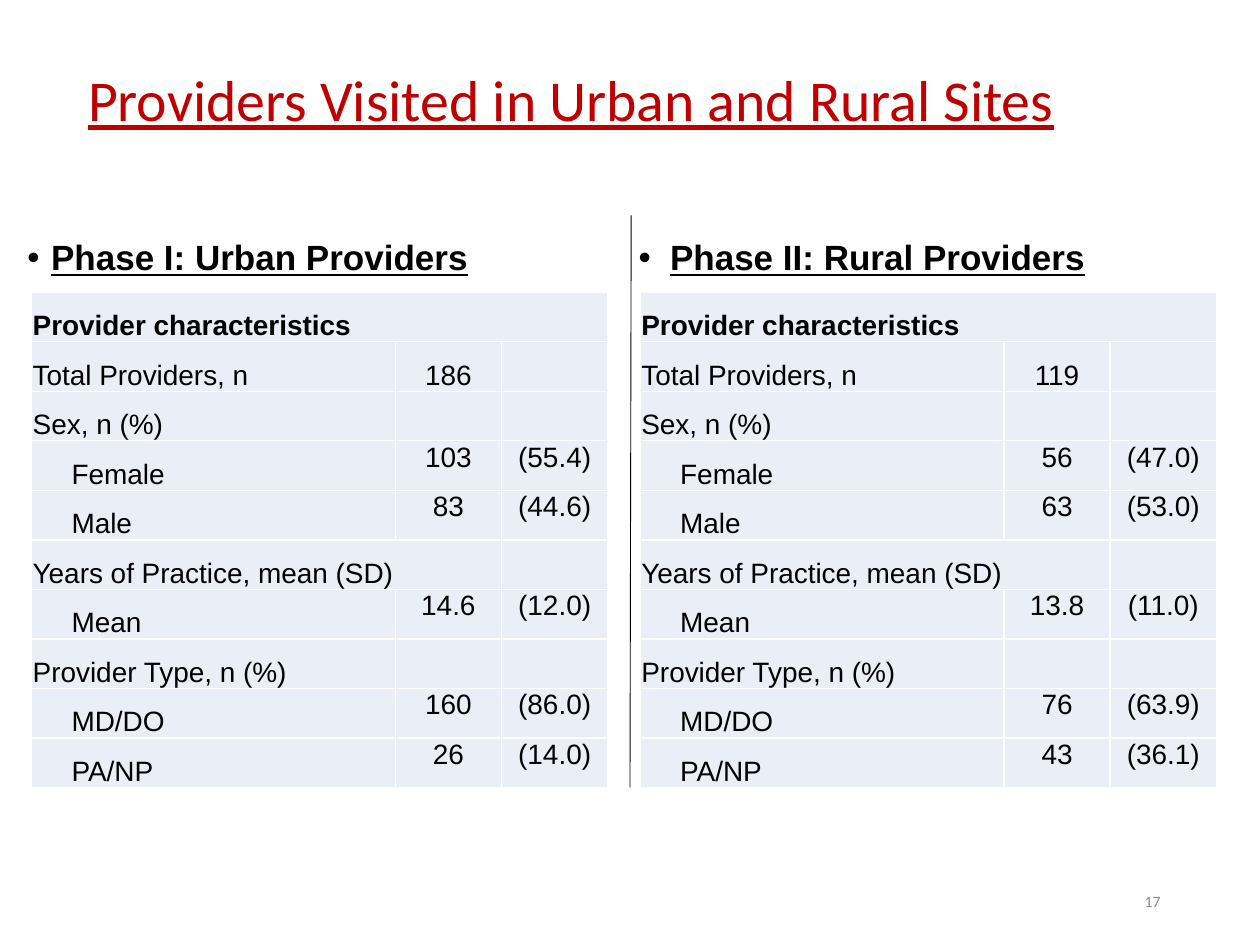
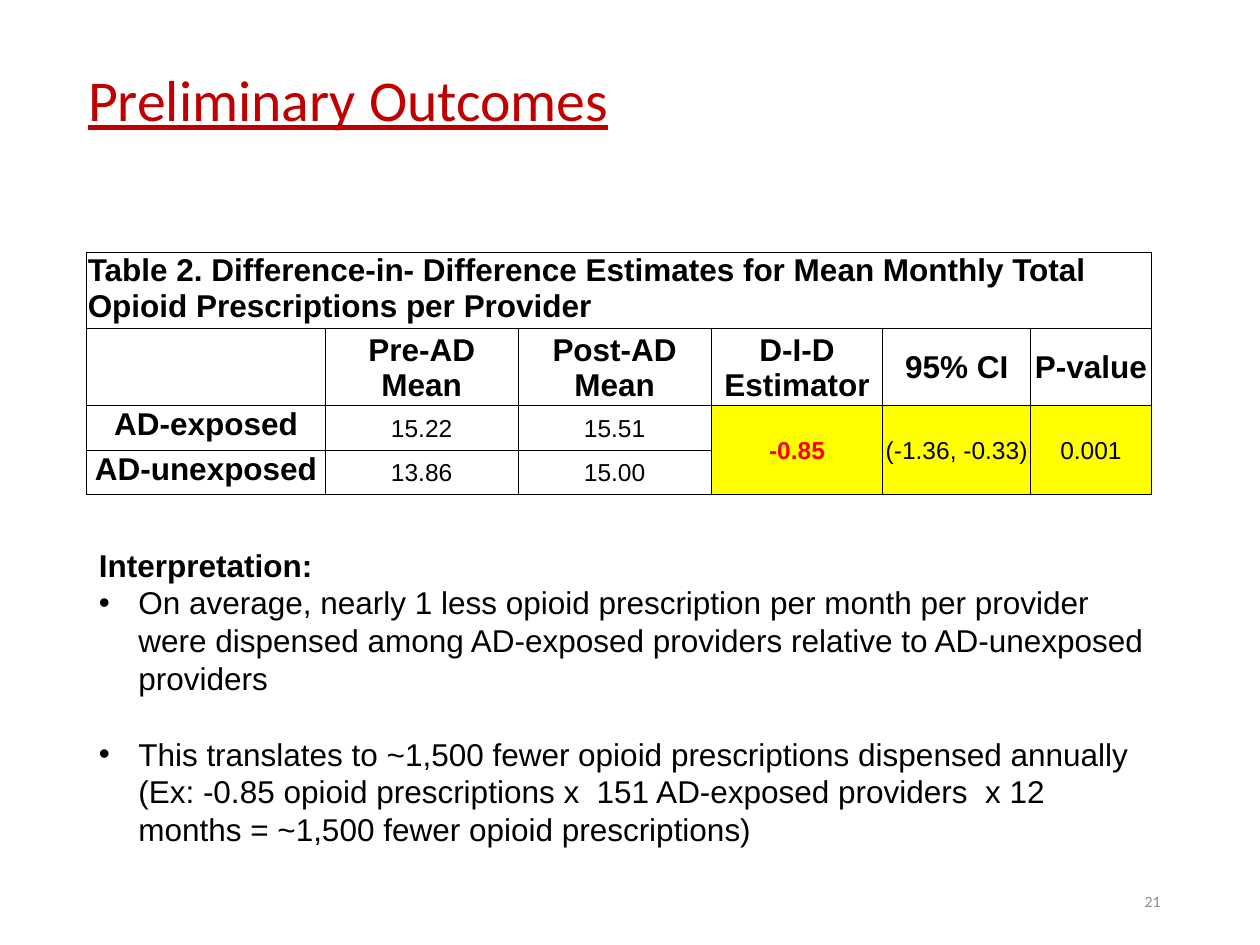
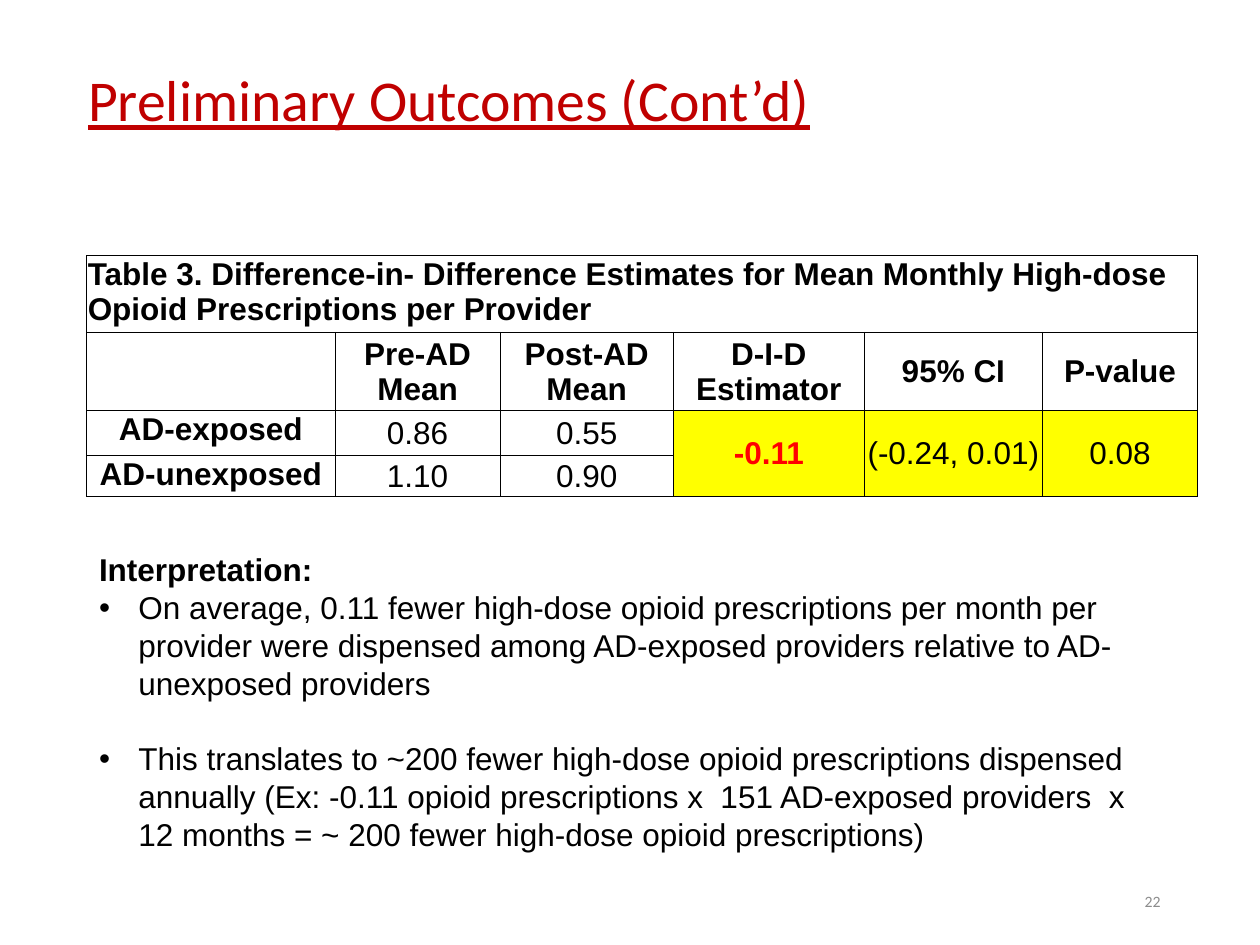
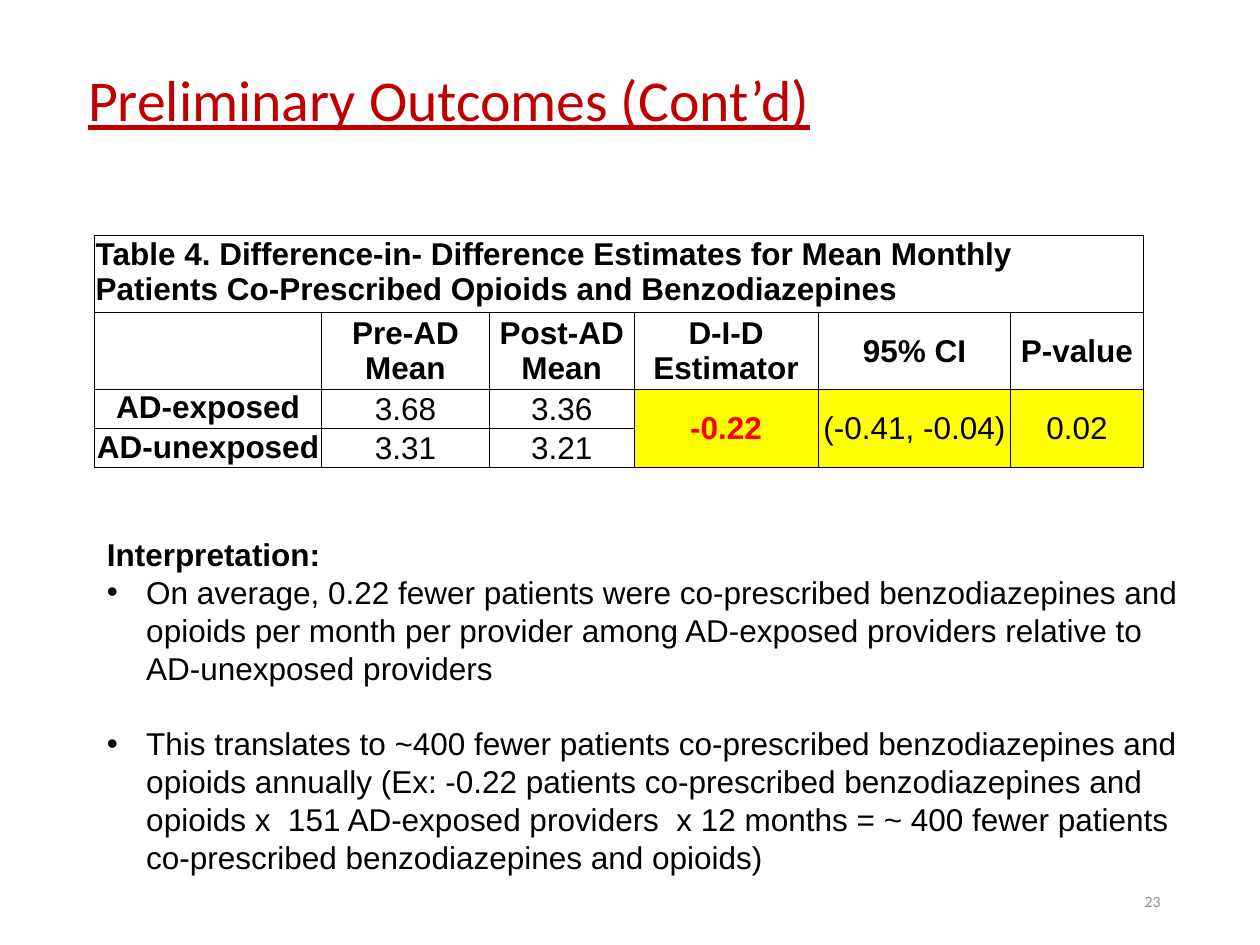
from lxml import etree
from pptx import Presentation
from pptx.dml.color import RGBColor
from pptx.enum.shapes import MSO_CONNECTOR
from pptx.enum.text import MSO_ANCHOR, PP_ALIGN
from pptx.oxml.ns import qn
from pptx.util import Pt

TOP, MIDDLE, BOTTOM = MSO_ANCHOR.TOP, MSO_ANCHOR.MIDDLE, MSO_ANCHOR.BOTTOM
LEFT, CENTER, RIGHT = PP_ALIGN.LEFT, PP_ALIGN.CENTER, PP_ALIGN.RIGHT
STRAIGHT = MSO_CONNECTOR.STRAIGHT

COLORS = {
    "title": "C00000", "text": "000000", "number": "8C8C8C",
    "white": "FFFFFF", "band": "EAEFF7", "highlight": "FFFF00", "effect": "FF0000",
}
TITLE_FONT, BODY_FONT = "Calibri", "Arial"

# Boxes are left, top, width, height in points
TITLE_BOX = (43.2, 54.7, 620.6, 43.9)
NUMBER_BOX = (508.3, 500.4, 162, 28.8)
LOWER_RULE_END, DASH_START, DASH_END = 365, 593.7, 601

PROVIDER_COLUMNS = (208, 60.5, 61)
PROVIDER_ROW_HEIGHT = 28.3
PROVIDER_LABELS = (
    "Provider characteristics", "Total Providers, n", "Sex, n (%)", "Female", "Male",
    "Years of Practice, mean (SD)", "Mean", "Provider Type, n (%)", "MD/DO", "PA/NP",
)
LABEL_SPANS = {"Provider characteristics": 2, "Years of Practice, mean (SD)": 1}
PHASES = (
    {
        "heading": "Phase I: Urban Providers", "heading_box": (8.6, 133.9, 358.6, 121),
        "indent": 13.5, "table_at": (18, 167),
        "values": {
            "Total Providers, n": ("186",), "Female": ("103", "(55.4)"),
            "Male": ("83", "(44.6)"), "Mean": ("14.6", "(12.0)"),
            "MD/DO": ("160", "(86.0)"), "PA/NP": ("26", "(14.0)"),
        },
    },
    {
        "heading": "Phase II: Rural Providers", "heading_box": (357.8, 133.9, 346.3, 121),
        "indent": 18, "table_at": (365.8, 167),
        "values": {
            "Total Providers, n": ("119",), "Female": ("56", "(47.0)"),
            "Male": ("63", "(53.0)"), "Mean": ("13.8", "(11.0)"),
            "MD/DO": ("76", "(63.9)"), "PA/NP": ("43", "(36.1)"),
        },
    },
)

ESTIMATE_HEADERS = ("Pre-AD Mean", "Post-AD Mean", "D-I-D Estimator", "95% CI", "P-value")
OUTCOMES = (
    {
        "title": "Preliminary Outcomes", "number": 21, "title_tabs": 2, "rule_end": 588,
        "caption": "Table 2. Difference-in- Difference Estimates for Mean Monthly Total "
                   "Opioid Prescriptions per Provider",
        "table_at": (49.5, 144), "columns": (136.5, 110, 110.5, 98, 84.5, 69),
        "rows": (41, 41, 25.5, 25.2), "value_size": 14,
        "exposed": ("15.22", "15.51"), "unexposed": ("13.86", "15.00"),
        "results": ("-0.85", "(-1.36, -0.33)", "0.001"),
        "text_box": (49.5, 308.2, 614.2, 203.8),
        "points": (
            "On average, nearly 1 less opioid prescription per month per provider were "
            "dispensed among AD-exposed providers relative to AD-unexposed providers",
            "This translates to ~1,500 fewer opioid prescriptions dispensed annually "
            "(Ex: -0.85 opioid prescriptions x  151 AD-exposed providers  x 12 months = "
            "~1,500 fewer opioid prescriptions)",
        ),
    },
    {
        "title": "Preliminary Outcomes (Cont’d)", "number": 22, "title_tabs": 1,
        "rule_end": 561,
        "caption": "Table 3. Difference-in- Difference Estimates for Mean Monthly High-dose "
                   "Opioid Prescriptions per Provider",
        "table_at": (49.5, 146), "columns": (142, 94.3, 99, 109.2, 101.7, 88.8),
        "rows": (41, 44.6, 26, 23), "value_size": 18,
        "exposed": ("0.86", "0.55"), "unexposed": ("1.10", "0.90"),
        "results": ("-0.11", "(-0.24, 0.01)", "0.08"),
        "text_box": (49.5, 311, 620.6, 181.4),
        "points": (
            "On average, 0.11 fewer high-dose opioid prescriptions per month per provider "
            "were dispensed among AD-exposed providers relative to AD-unexposed providers",
            "This translates to ~200 fewer high-dose opioid prescriptions dispensed annually "
            "(Ex: -0.11 opioid prescriptions x  151 AD-exposed providers  x 12 months = "
            "~ 200 fewer high-dose opioid prescriptions)",
        ),
    },
    {
        "title": "Preliminary Outcomes (Cont’d)", "number": 23, "title_tabs": 1,
        "rule_end": 561,
        "caption": "Table 4. Difference-in- Difference Estimates for Mean Monthly Patients "
                   "Co-Prescribed Opioids and Benzodiazepines",
        "table_at": (54, 134.6), "columns": (129.8, 95.8, 82.8, 105.1, 110.2, 75.6),
        "rows": (41, 41, 21, 21), "value_size": 18,
        "exposed": ("3.68", "3.36"), "unexposed": ("3.31", "3.21"),
        "results": ("-0.22", "(-0.41, -0.04)", "0.02"),
        "text_box": (54, 302.4, 633.6, 225.4),
        "points": (
            "On average, 0.22 fewer patients were co-prescribed benzodiazepines and opioids "
            "per month per provider among AD-exposed providers relative to AD-unexposed "
            "providers",
            "This translates to ~400 fewer patients co-prescribed benzodiazepines and opioids "
            "annually (Ex: -0.22 patients co-prescribed benzodiazepines and opioids x  151 "
            "AD-exposed providers  x 12 months = ~ 400 fewer patients co-prescribed "
            "benzodiazepines and opioids)",
        ),
    },
)


def color(name):
    return RGBColor.from_string(COLORS[name])


def style(paragraph, size, color_name="text", bold=False, font_name=BODY_FONT):
    font = paragraph.font
    font.name, font.size, font.bold = font_name, Pt(size), bold
    font.color.rgb = color(color_name)


def add_text_box(slide, box, anchor=TOP):
    frame = slide.shapes.add_textbox(*map(Pt, box)).text_frame
    frame.word_wrap = True
    frame.vertical_anchor = anchor
    return frame


def set_bullet(paragraph, indent):
    properties = paragraph._p.get_or_add_pPr()
    properties.set("marL", str(Pt(indent)))
    properties.set("indent", str(-Pt(indent)))
    etree.SubElement(properties, qn("a:buFont"), typeface=BODY_FONT)
    etree.SubElement(properties, qn("a:buChar"), char="•")


def set_tab_stops(paragraph, stops):
    tab_list = etree.SubElement(paragraph._p.get_or_add_pPr(), qn("a:tabLst"))
    for stop in stops:
        etree.SubElement(tab_list, qn("a:tab"), pos=str(Pt(stop)), algn="l")


def add_run(paragraph, text, underline=None):
    run = paragraph.add_run()
    run.text = text
    run.font.underline = underline


# Title with underlined tabs as rules, and the slide number
def add_slide(presentation, title, number, title_tabs=0, rule_end=None):
    slide = presentation.slides.add_slide(presentation.slide_layouts[6])
    paragraph = add_text_box(slide, TITLE_BOX, MIDDLE).paragraphs[0]
    paragraph.line_spacing = 0.9
    stops = [LOWER_RULE_END, rule_end, DASH_START, DASH_END]
    set_tab_stops(paragraph, [stop for stop in stops if stop])
    style(paragraph, 33, "title", font_name=TITLE_FONT)
    add_run(paragraph, title + "\t" * title_tabs, True)
    add_run(paragraph, "\t")
    add_run(paragraph, "\t", True)
    paragraph.add_line_break()
    add_run(paragraph, "\t", True)

    paragraph = add_text_box(slide, NUMBER_BOX, MIDDLE).paragraphs[0]
    paragraph.text = str(number)
    paragraph.alignment = RIGHT
    style(paragraph, 9, "number", font_name=TITLE_FONT)
    return slide


def set_borders(cell, color_name, width):
    properties = cell._tc.get_or_add_tcPr()
    for side in ("lnL", "lnR", "lnT", "lnB"):
        line = etree.SubElement(properties, qn(f"a:{side}"), w=str(Pt(width)))
        fill = etree.SubElement(line, qn("a:solidFill"))
        etree.SubElement(fill, qn("a:srgbClr"), val=COLORS[color_name])


# Table whose cells all have the same borders, fill and margins
def add_plain_table(slide, position, columns, rows, border, fill=None):
    box = (*position, sum(columns), sum(rows))
    table = slide.shapes.add_table(len(rows), len(columns), *map(Pt, box)).table
    table.first_row = table.horz_banding = False
    for column, width in zip(table.columns, columns):
        column.width = Pt(width)
    for row, height in zip(table.rows, rows):
        row.height = Pt(height)
    for cell in table.iter_cells():
        set_borders(cell, *border)
        cell.margin_left = cell.margin_right = cell.margin_top = Pt(0.7)
        cell.margin_bottom = 0
        if fill:
            cell.fill.solid()
            cell.fill.fore_color.rgb = color(fill)
        else:
            cell.fill.background()
        style(cell.text_frame.paragraphs[0], 16)
    return table


def write_cell(cell, text, size, anchor, alignment=CENTER, bold=False, color_name="text"):
    paragraph = cell.text_frame.paragraphs[0]
    paragraph.text = text
    paragraph.alignment = alignment
    cell.vertical_anchor = anchor
    style(paragraph, size, color_name, bold)
    return paragraph


# Bulleted heading above a table of provider characteristics
def add_phase(slide, phase):
    paragraph = add_text_box(slide, phase["heading_box"]).paragraphs[0]
    paragraph.line_spacing = 0.9
    set_bullet(paragraph, phase["indent"])
    style(paragraph, 20, bold=True)
    add_run(paragraph, phase["heading"], True)

    rows = [PROVIDER_ROW_HEIGHT] * len(PROVIDER_LABELS)
    table = add_plain_table(slide, phase["table_at"], PROVIDER_COLUMNS, rows,
                            ("white", 1), "band")
    for row, label in enumerate(PROVIDER_LABELS):
        values = phase["values"].get(label, ())
        if label in LABEL_SPANS:
            table.cell(row, 0).merge(table.cell(row, LABEL_SPANS[label]))
        paragraph = write_cell(table.cell(row, 0), label, 16, BOTTOM, LEFT, bold=row == 0)
        is_subgroup = len(values) == 2
        if is_subgroup:
            paragraph._p.get_or_add_pPr().set("marL", str(Pt(22.2)))
        for column, value in enumerate(values, 1):
            write_cell(table.cell(row, column), value, 16, TOP if is_subgroup else BOTTOM)


def build_providers_slide(presentation):
    slide = add_slide(presentation, "Providers Visited in Urban and Rural Sites", 17)
    for phase in PHASES:
        add_phase(slide, phase)
    divider = slide.shapes.add_connector(STRAIGHT, Pt(360.7), Pt(123.1), Pt(360), Pt(450))
    divider.line.color.rgb = color("text")
    divider.line.width = Pt(0.5)
    etree.SubElement(divider._element.spPr, qn("a:effectLst"))


# Caption, headers, two groups and highlighted results over both groups
def add_estimates(slide, outcome):
    table = add_plain_table(slide, outcome["table_at"], outcome["columns"], outcome["rows"],
                            ("text", 0.5))
    table.cell(0, 0).merge(table.cell(0, 5))
    write_cell(table.cell(0, 0), outcome["caption"], 18, TOP, LEFT, bold=True)
    for column, header in enumerate(ESTIMATE_HEADERS, 1):
        write_cell(table.cell(1, column), header, 18, MIDDLE, bold=True)
    size = outcome["value_size"]
    for row, group in enumerate(("exposed", "unexposed"), 2):
        write_cell(table.cell(row, 0), f"AD-{group}", 18, TOP, bold=True)
        for column, value in enumerate(outcome[group], 1):
            write_cell(table.cell(row, column), value, size, MIDDLE)
    for column, value in enumerate(outcome["results"], 3):
        cell = table.cell(2, column)
        cell.merge(table.cell(3, column))
        cell.fill.solid()
        cell.fill.fore_color.rgb = color("highlight")
        is_estimator = column == 3
        write_cell(cell, value, size, MIDDLE, bold=is_estimator,
                   color_name="effect" if is_estimator else "text")


def add_interpretation(slide, box, points):
    frame = add_text_box(slide, box)
    heading = frame.paragraphs[0]
    heading.text = "Interpretation:"
    style(heading, 18, bold=True)
    for index, point in enumerate(points):
        paragraph = frame.add_paragraph()
        paragraph.text = point
        paragraph.space_before = Pt(21.6 * index)
        set_bullet(paragraph, 22.5)
        style(paragraph, 18)


def build_outcome_slide(presentation, outcome):
    slide = add_slide(presentation, outcome["title"], outcome["number"],
                      outcome["title_tabs"], outcome["rule_end"])
    add_estimates(slide, outcome)
    add_interpretation(slide, outcome["text_box"], outcome["points"])


def main():
    presentation = Presentation()
    presentation.slide_width, presentation.slide_height = Pt(720), Pt(540)
    build_providers_slide(presentation)
    for outcome in OUTCOMES:
        build_outcome_slide(presentation, outcome)
    presentation.save("out.pptx")


if __name__ == "__main__":
    main()
